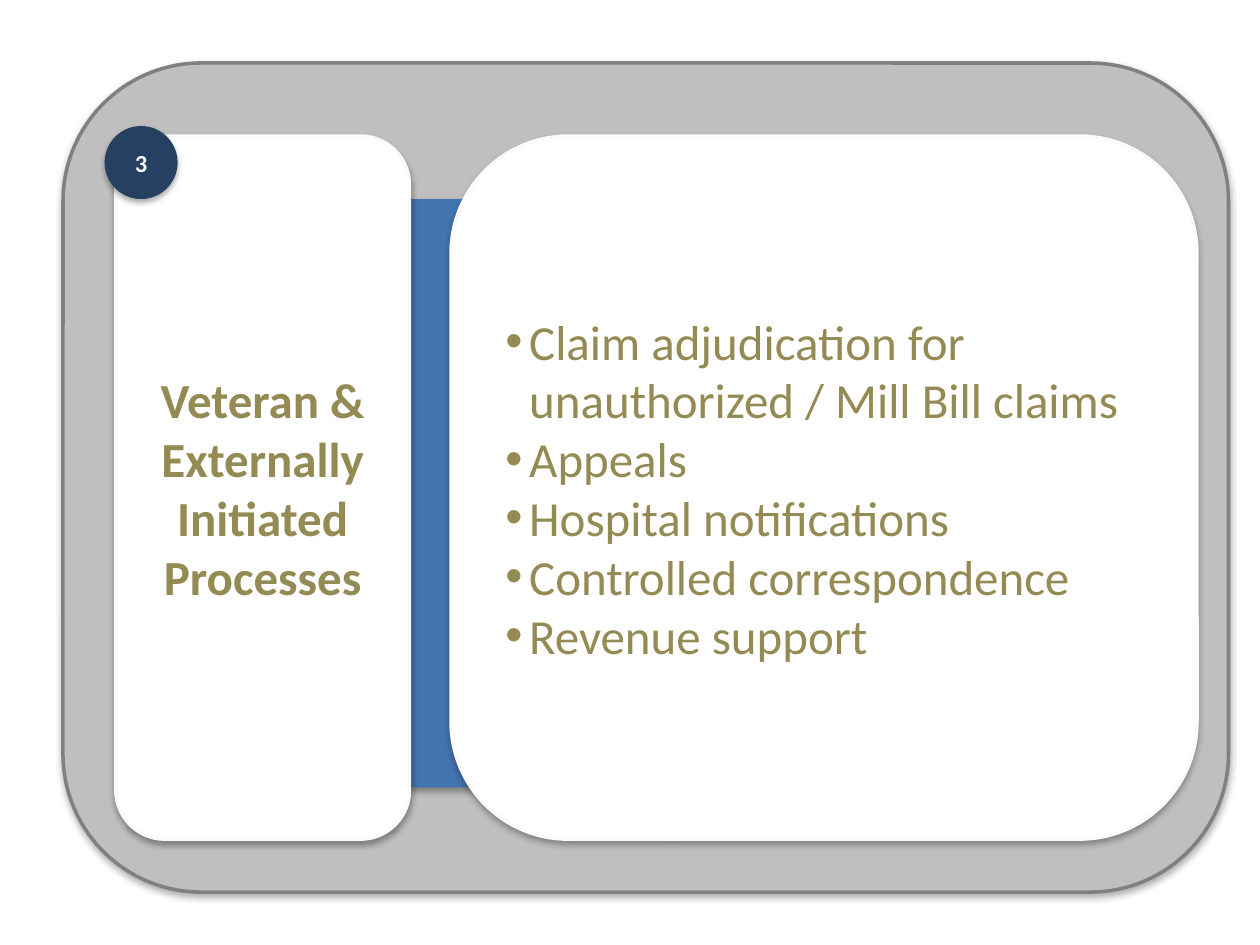
import pptx
import pptx.dml.color
import pptx.enum.shapes
import pptx.enum.text
import pptx.oxml
import pptx.oxml.ns
import pptx.util

Inches = pptx.util.Inches
Pt = pptx.util.Pt
Kind = pptx.enum.shapes.MSO_SHAPE
Align = pptx.enum.text.PP_ALIGN
NS = pptx.oxml.ns.nsdecls("a")

SHADE = (
    f'<a:outerShdw {NS} blurRad="{Pt(3.5)}" dist="{Pt(2.2)}" dir="5400000" rotWithShape="0">'
    '<a:srgbClr val="000000"><a:alpha val="32000"/></a:srgbClr></a:outerShdw>'
)


def color(code):
    return pptx.dml.color.RGBColor.from_string(code)


def write(frame, text, size=28, tint="948A54", bold=False, align=Align.CENTER, bullet=None):
    frame.word_wrap = True
    frame.vertical_anchor = pptx.enum.text.MSO_ANCHOR.MIDDLE
    for row, words in enumerate(text.split("\n")):
        para = frame.add_paragraph() if row else frame.paragraphs[0]
        para.alignment = align
        if bullet:
            props = para._p.get_or_add_pPr()
            props.set("marL", str(Inches(0.25)))
            props.set("indent", str(Inches(-0.19)))
            props.append(pptx.oxml.parse_xml(f'<a:buFont {NS} typeface="Arial"/>'))
            props.append(pptx.oxml.parse_xml(f'<a:buChar {NS} char="{bullet}"/>'))
        run = para.add_run()
        run.text = words
        run.font.name = "Calibri"
        run.font.size = Pt(size)
        run.font.bold = bold
        run.font.color.rgb = color(tint)


class Deck:
    white = "FFFFFF"
    edge = "FCFBF9"

    def __init__(self):
        self.file = pptx.Presentation()
        self.file.slide_width = Inches(10)
        self.file.slide_height = Inches(7.5)
        self.slide = self.file.slides.add_slide(self.file.slide_layouts[6])

    def block(self, left, top, width, height, fill, line=None, kind=Kind.ROUNDED_RECTANGLE):
        place = [Inches(n) for n in (left, top, width, height)]
        shape = self.slide.shapes.add_shape(kind, *place)
        shape.fill.solid()
        shape.fill.fore_color.rgb = color(fill)
        if line:
            shape.line.color.rgb = color(line)
            shape.line.width = Pt(2)
        else:
            shape.line.fill.background()
        shape.shadow.inherit = False
        effects = shape._element.spPr.find(pptx.oxml.ns.qn("a:effectLst"))
        effects.append(pptx.oxml.parse_xml(SHADE))
        return shape

    def panel(self, left, width, text, **style):
        shape = self.block(left, 1.08, width, 5.58, self.white, self.edge)
        write(shape.text_frame, text, **style)

    def badge(self, left, top, text):
        shape = self.block(left, top, 0.58, 0.58, "254061", kind=Kind.FLOWCHART_CONNECTOR)
        write(shape.text_frame, text, size=14, tint=self.white, bold=True)


def main():
    deck = Deck()
    deck.block(0.5, 0.5, 9.25, 6.58, "BFBFBF", "808080")
    deck.block(1.5, 1.58, 4, 4.67, "4274AF")
    deck.panel(0.92, 2.33, "Veteran & Externally Initiated Processes", bold=True)
    deck.badge(0.83, 1, "3")
    tasks = [
        "Claim adjudication for unauthorized / Mill Bill claims",
        "Appeals",
        "Hospital notifications",
        "Controlled correspondence",
        "Revenue support",
    ]
    deck.panel(3.58, 5.92, "\n".join(tasks), align=Align.LEFT, bullet="•")
    deck.file.save("out.pptx")


if __name__ == "__main__":
    main()
